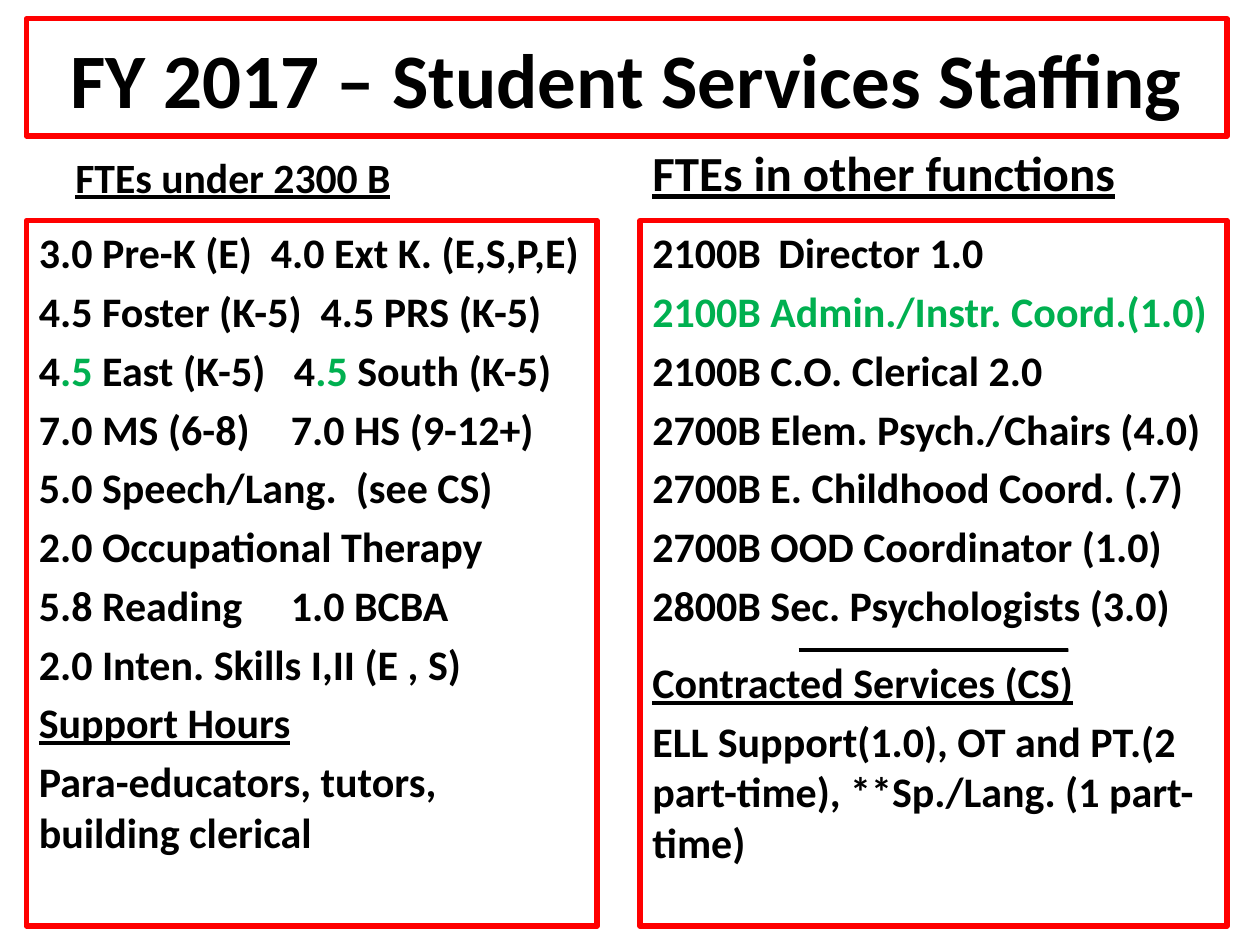
from dataclasses import dataclass

from pptx import Presentation
from pptx.dml.color import RGBColor
from pptx.enum.text import MSO_ANCHOR, PP_ALIGN
from pptx.util import Inches, Pt

BLACK = RGBColor(0x00, 0x00, 0x00)
GREEN = RGBColor(0x00, 0xB0, 0x50)
RED = RGBColor(0xFF, 0x00, 0x00)
FONT_NAME = "Calibri"
BODY_SIZE = 24


@dataclass(frozen=True)
class Piece:
    text: str
    color: RGBColor = BLACK


@dataclass(frozen=True)
class Line:
    pieces: tuple[Piece, ...]
    size: float = BODY_SIZE
    underline: bool = False
    alignment: PP_ALIGN = PP_ALIGN.LEFT
    spacing: float = 1.0
    space_ratio: float = 0.2


@dataclass(frozen=True)
class Panel:
    left: float
    top: float
    width: float
    height: float
    lines: tuple[Line, ...]
    anchor: MSO_ANCHOR = MSO_ANCHOR.TOP
    framed: bool = True


def plain(text: str, color: RGBColor = BLACK, **options) -> Line:
    """Return a line in a single colour."""
    return Line((Piece(text, color),), **options)


def draw_panel(slide, panel: Panel) -> None:
    """Add a text box, with a red frame if the panel has one."""
    shape = slide.shapes.add_textbox(
        Inches(panel.left), Inches(panel.top), Inches(panel.width), Inches(panel.height)
    )
    if panel.framed:
        shape.line.color.rgb = RED
        shape.line.width = Pt(3)
    text_frame = shape.text_frame
    text_frame.word_wrap = True
    text_frame.vertical_anchor = panel.anchor
    for index, line in enumerate(panel.lines):
        paragraph = text_frame.add_paragraph() if index else text_frame.paragraphs[0]
        write_line(paragraph, line)


def write_line(paragraph, line: Line) -> None:
    """Fill a paragraph with the coloured pieces of one line."""
    paragraph.alignment = line.alignment
    paragraph.line_spacing = line.spacing
    paragraph.space_before = Pt(line.size * line.space_ratio)
    for piece in line.pieces:
        run = paragraph.add_run()
        run.text = piece.text
        run.font.name = FONT_NAME
        run.font.size = Pt(line.size)
        run.font.bold = True
        run.font.underline = line.underline
        run.font.color.rgb = piece.color


# Text of the two lists
STAFF_LINES = (
    plain("3.0 Pre-K (E)  4.0 Ext K. (E,S,P,E)"),
    plain("4.5 Foster (K-5)  4.5 PRS (K-5)"),
    Line((
        Piece("4"),
        Piece(".5", GREEN),
        Piece(" East (K-5)   4"),
        Piece(".5", GREEN),
        Piece(" South (K-5)"),
    )),
    plain("7.0 MS (6-8)\t7.0 HS (9-12+)"),
    plain("5.0 Speech/Lang.  (see CS)"),
    plain("2.0 Occupational Therapy"),
    plain("5.8 Reading\t1.0 BCBA"),
    plain("2.0 Inten. Skills I,II (E , S)"),
    plain("Support Hours", underline=True),
    plain("Para-educators, tutors, building clerical"),
)
OTHER_LINES = (
    plain("2100B\tDirector 1.0"),
    plain("2100B Admin./Instr. Coord.(1.0)", GREEN),
    plain("2100B C.O. Clerical 2.0"),
    plain("2700B Elem. Psych./Chairs (4.0)"),
    plain("2700B E. Childhood Coord. (.7)"),
    plain("2700B OOD Coordinator (1.0)"),
    plain("2800B Sec. Psychologists (3.0)"),
    plain("  ____________", underline=True, alignment=PP_ALIGN.CENTER, spacing=0.2),
    plain("Contracted Services (CS)", underline=True),
    plain("ELL Support(1.0), OT and PT.(2 part-time), **Sp./Lang. (1 part-time)"),
)

# Title, column headings and framed lists
TITLE = plain(
    "FY 2017 – Student Services Staffing",
    size=44, alignment=PP_ALIGN.CENTER, space_ratio=0,
)
STAFF_HEADING = plain("FTEs under 2300 B", size=23.8, underline=True)
OTHER_HEADING = plain("FTEs in other functions", size=28, underline=True)
PANELS = (
    Panel(0.21, 0.15, 9.53, 0.93, (TITLE,), MSO_ANCHOR.MIDDLE),
    Panel(0.5, 1.21, 4.42, 0.44, (STAFF_HEADING,), MSO_ANCHOR.BOTTOM, framed=False),
    Panel(0.21, 1.75, 4.53, 5.6, STAFF_LINES),
    Panel(5.08, 1.21, 4.42, 0.44, (OTHER_HEADING,), MSO_ANCHOR.BOTTOM, framed=False),
    Panel(5.08, 1.75, 4.66, 5.6, OTHER_LINES),
)


def main() -> None:
    presentation = Presentation()
    presentation.slide_width = Inches(10)
    presentation.slide_height = Inches(7.5)
    slide = presentation.slides.add_slide(presentation.slide_layouts[6])
    for panel in PANELS:
        draw_panel(slide, panel)
    presentation.save("out.pptx")


if __name__ == "__main__":
    main()
